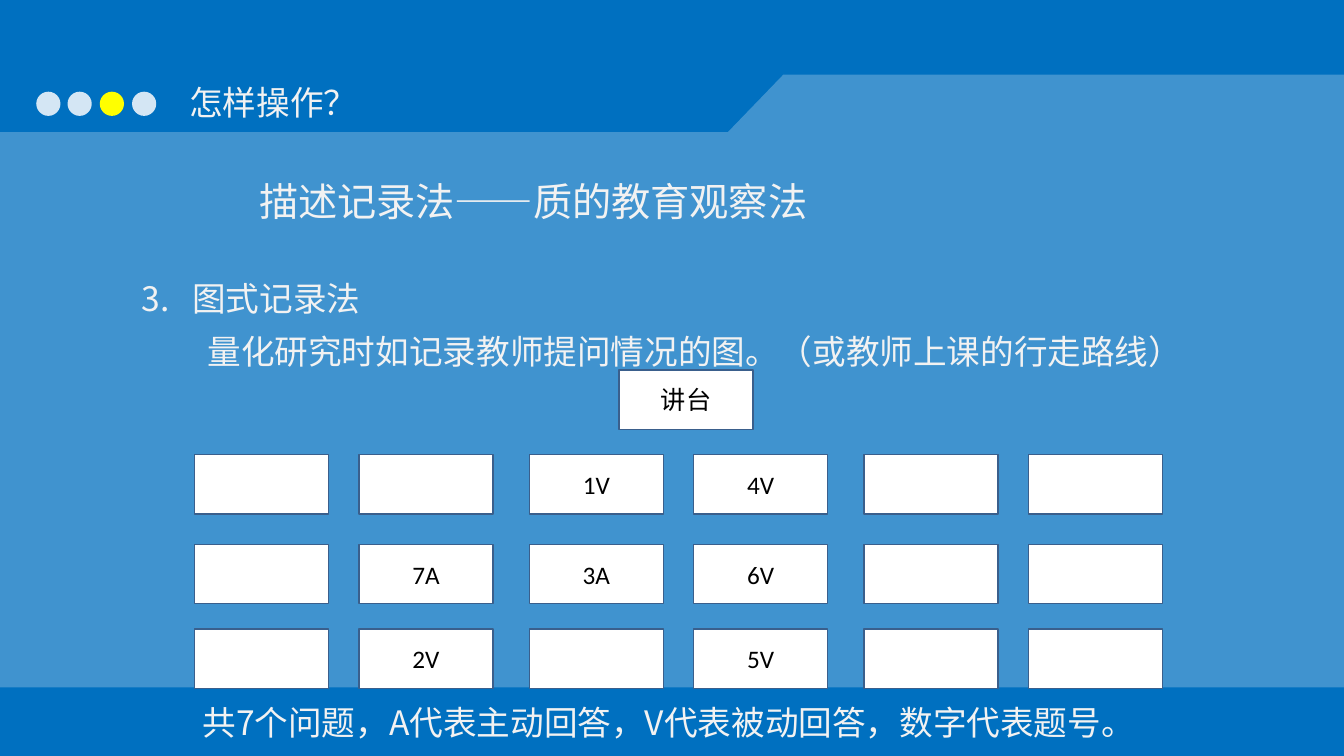
from dataclasses import dataclass

import lxml.etree
import pptx
import pptx.dml.color
import pptx.enum.shapes
import pptx.enum.text
import pptx.oxml.ns
import pptx.util

PX = 9144  # EMU in one px, 100 px to the inch
SLIDE_W, SLIDE_H = 1333, 750

RGB = pptx.dml.color.RGBColor
BLUE = RGB(0x00, 0x70, 0xC0)
WHITE = RGB(0xFF, 0xFF, 0xFF)
YELLOW = RGB(0xFF, 0xFF, 0x00)
PALE = RGB(0xF2, 0xF2, 0xF2)
BLACK = RGB(0x00, 0x00, 0x00)
SEAT_EDGE = RGB(0x3A, 0x5F, 0x8C)
CJK_FONT, LATIN_FONT = "Noto Sans CJK SC", "Calibri"

SHAPES = pptx.enum.shapes.MSO_SHAPE
ALIGN = pptx.enum.text.PP_ALIGN
ANCHOR = pptx.enum.text.MSO_ANCHOR


@dataclass(frozen=True)
class Box:
    left: int
    top: int
    width: int
    height: int

    def emu(self) -> tuple[int, ...]:
        return tuple(v * PX for v in (self.left, self.top, self.width, self.height))


@dataclass(frozen=True)
class Line:
    text: str
    size: int = 24
    spacing: float | None = 1.3
    before: float = 2
    after: float = 0.6
    margin: int = 0
    indent: int = 0


@dataclass(frozen=True)
class Seat:
    box: Box
    label: str = ""


def add_run(paragraph, text: str, size: int, font: str, color: RGB) -> None:
    run = paragraph.add_run()
    run.text = text
    run.font.size = pptx.util.Pt(size)
    run.font.name = font
    run.font.color.rgb = color
    east_asian = lxml.etree.SubElement(run._r.get_or_add_rPr(), pptx.oxml.ns.qn("a:ea"))
    east_asian.set("typeface", CJK_FONT)


def write_lines(shape, lines: list[Line]) -> None:
    frame = shape.text_frame
    frame.word_wrap = True
    frame.vertical_anchor = ANCHOR.TOP
    frame.auto_size = pptx.enum.text.MSO_AUTO_SIZE.SHAPE_TO_FIT_TEXT
    for number, line in enumerate(lines):
        paragraph = frame.add_paragraph() if number else frame.paragraphs[0]
        paragraph.alignment = ALIGN.LEFT
        paragraph.line_spacing = line.spacing
        paragraph.space_before = pptx.util.Pt(line.before)
        paragraph.space_after = pptx.util.Pt(line.after)
        properties = paragraph._p.get_or_add_pPr()
        properties.set("marL", str(line.margin * PX))
        properties.set("indent", str(line.indent * PX))
        add_run(paragraph, line.text, line.size, CJK_FONT, PALE)


def add_text(slide, box: Box, lines: list[Line]) -> None:
    write_lines(slide.shapes.add_textbox(*box.emu()), lines)


def fill_white(shape, opacity: int) -> None:
    shape.fill.solid()
    shape.fill.fore_color.rgb = WHITE
    color = shape.fill._xPr.find(".//" + pptx.oxml.ns.qn("a:srgbClr"))
    alpha = lxml.etree.SubElement(color, pptx.oxml.ns.qn("a:alpha"))
    alpha.set("val", str(opacity * 1000))


def add_panel(slide) -> None:
    builder = slide.shapes.build_freeform(0, 131, scale=PX)
    builder.add_line_segments(
        [(722, 131), (777, 74), (SLIDE_W, 74), (SLIDE_W, 682), (0, 682)], close=True
    )
    panel = builder.convert_to_shape()
    panel.shadow.inherit = False
    panel.line.fill.background()
    fill_white(panel, 25)


def add_progress_dot(slide, box: Box, current: bool) -> None:
    dot = slide.shapes.add_shape(SHAPES.OVAL, *box.emu())
    dot.shadow.inherit = False
    dot.line.fill.background()
    if current:
        dot.fill.solid()
        dot.fill.fore_color.rgb = YELLOW
    else:
        fill_white(dot, 83)


def add_seat(slide, seat: Seat) -> None:
    desk = slide.shapes.add_shape(SHAPES.RECTANGLE, *seat.box.emu())
    desk.shadow.inherit = False
    desk.fill.solid()
    desk.fill.fore_color.rgb = WHITE
    desk.line.color.rgb = SEAT_EDGE
    desk.line.width = pptx.util.Pt(1)
    if seat.label:
        desk.text_frame.vertical_anchor = ANCHOR.MIDDLE
        paragraph = desk.text_frame.paragraphs[0]
        paragraph.alignment = ALIGN.CENTER
        add_run(paragraph, seat.label, 18, LATIN_FONT, BLACK)


# Seating plan: three pairs of columns, three rows
SEAT_W, SEAT_H = 133, 59
COLUMN_LEFTS = [193 + 332 * pair + 163 * side for pair in range(3) for side in range(2)]
SEAT_ROWS = {
    451: ["", "", "1V", "4V", "", ""],
    540: ["", "7A", "3A", "6V", "", ""],
    624: ["", "2V", "", "5V", "", ""],
}
SEATS = [
    Seat(Box(left, top, SEAT_W, SEAT_H), label)
    for top, labels in SEAT_ROWS.items()
    for left, label in zip(COLUMN_LEFTS, labels)
]
PODIUM = Seat(Box(614, 367, SEAT_W, SEAT_H), "讲台")


def main() -> None:
    deck = pptx.Presentation()
    deck.slide_width, deck.slide_height = SLIDE_W * PX, SLIDE_H * PX
    slide = deck.slides.add_slide(deck.slide_layouts.get_by_name("Title Only"))
    slide.background.fill.solid()
    slide.background.fill.fore_color.rgb = BLUE

    # Panel and section header
    add_panel(slide)
    for position in range(4):
        add_progress_dot(slide, Box(36 + 95 * position // 3, 91, 24, 24), position == 2)
    section = Line("怎样操作？", spacing=None, before=0, after=0)
    add_text(slide, Box(178, 76, 394, 50), [section])

    # Title, brought in front of the panel
    title = slide.shapes.title
    title.left, title.top, title.width, title.height = Box(247, 157, 963, 71).emu()
    write_lines(title, [Line("描述记录法——质的教育观察法", size=28)])
    slide.shapes._spTree.append(title._element)

    # Method
    add_text(slide, Box(131, 259, 1059, 320), [
        Line("3.\t图式记录法", margin=50, indent=-50),
        Line("量化研究时如记录教师提问情况的图。（或教师上课的行走路线）",
             before=0, after=0, indent=65),
    ])

    # Classroom and key
    for seat in [*SEATS, PODIUM]:
        add_seat(slide, seat)
    add_text(slide, Box(191, 679, 963, 63),
             [Line("共7个问题，A代表主动回答，V代表被动回答，数字代表题号。")])

    deck.save("out.pptx")


if __name__ == "__main__":
    main()
